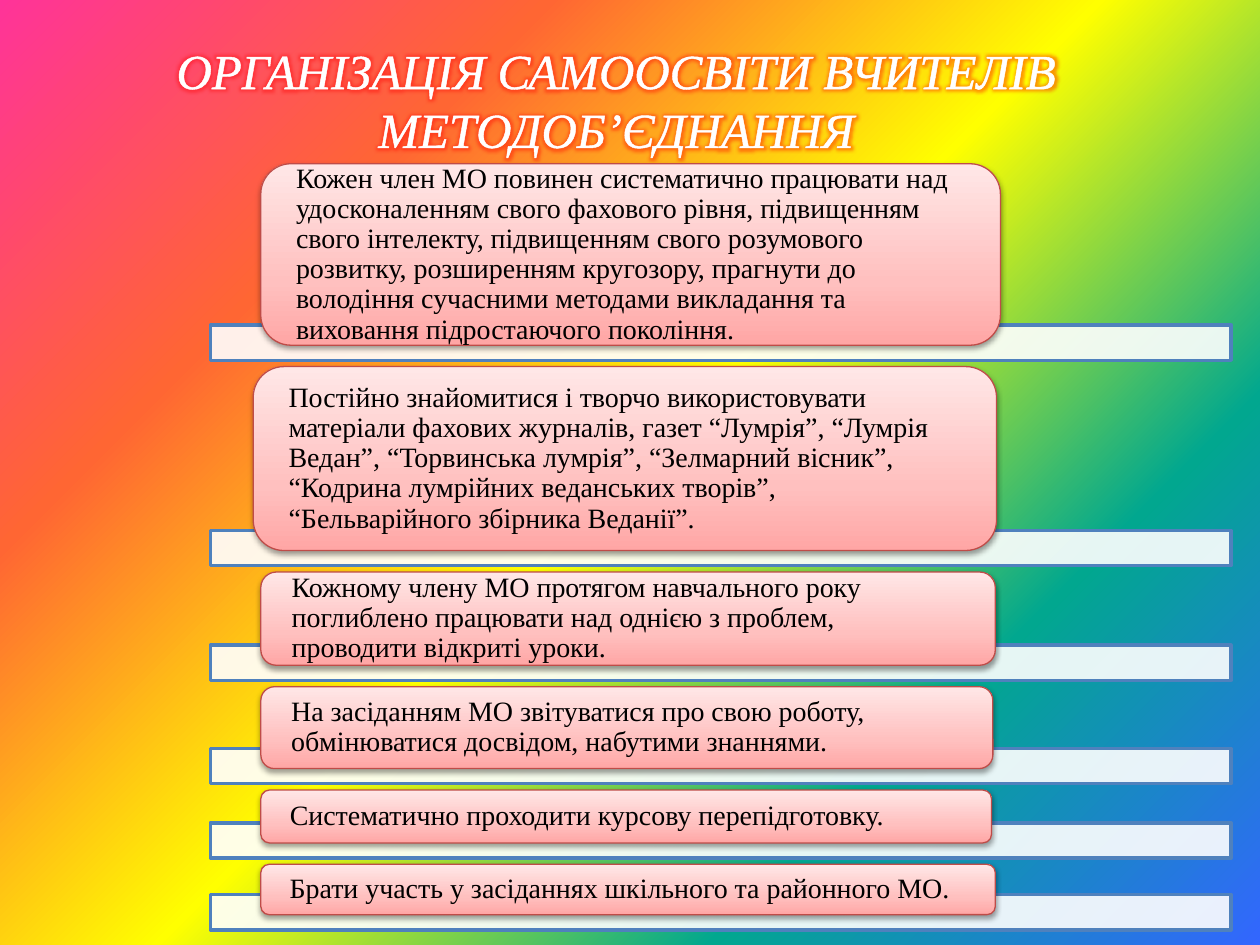
import pptx
import pptx.util
import pptx.dml.color
import pptx.enum.shapes
import pptx.enum.text
import pptx.oxml
import pptx.oxml.ns

Inches, Pt = pptx.util.Inches, pptx.util.Pt
SHAPE = pptx.enum.shapes.MSO_SHAPE
ALIGN = pptx.enum.text.PP_ALIGN
MIDDLE = pptx.enum.text.MSO_ANCHOR.MIDDLE
qn = pptx.oxml.ns.qn

FONT = "Times New Roman"
TITLE = "ОРГАНІЗАЦІЯ САМООСВІТИ ВЧИТЕЛІВ МЕТОДОБ’ЄДНАННЯ"
RAINBOW = [(0, "FF3399"), (25, "FF6633"), (50, "FFFF00"),
           (75, "01A78F"), (100, "3366FF")]
PINK = [(0, "FFA6A5"), (35, "FFC0BF"), (100, "FFE7E7")]

# Left, width, height and text of each card
CARDS = [
    (2.07, 5.87, 1.44, "Кожен член МО повинен систематично працювати над удосконаленням "
     "свого фахового рівня, підвищенням свого інтелекту, підвищенням свого розумового "
     "розвитку, розширенням кругозору, прагнути до володіння сучасними методами "
     "викладання та виховання підростаючого покоління."),
    (2.01, 5.9, 1.46, "Постійно знайомитися і творчо використовувати матеріали фахових "
     "журналів, газет “Лумрія”, “Лумрія Ведан”, “Торвинська лумрія”, “Зелмарний вісник”, "
     "“Кодрина лумрійних веданських творів”, “Бельварійного збірника Веданії”."),
    (2.07, 5.83, 0.74, "Кожному члену МО протягом навчального року поглиблено працювати "
     "над однією з проблем, проводити відкриті уроки."),
    (2.07, 5.81, 0.65, "На засіданням МО звітуватися про свою роботу, обмінюватися "
     "досвідом, набутими знаннями."),
    (2.07, 5.8, 0.42, "Систематично проходити курсову перепідготовку."),
    (2.07, 5.83, 0.4, "Брати участь у засіданнях шкільного та районного МО."),
]
TOP, GAP = 1.3, 0.17
BAR = {"left": 1.67, "width": 8.1, "height": 0.28, "lap": 0.16}


def color(code):
    return pptx.dml.color.RGBColor.from_string(code)


def node(body):
    """Parse one drawing element, given without its namespace."""
    name, rest = body.split(" ", 1)
    return pptx.oxml.parse_xml(f'<a:{name} {pptx.oxml.ns.nsdecls("a")} {rest}')


def tint(code, alpha):
    return f'<a:srgbClr val="{code}"><a:alpha val="{alpha * 1000}"/></a:srgbClr>'


def blend(fill, root, stops, angle):
    """Give a fill a gradient with any number of stops."""
    fill.gradient()
    fill.gradient_angle = angle
    items = root.find(".//" + qn("a:gsLst"))
    for old in list(items):
        items.remove(old)
    for place, code in stops:
        items.append(node(f'gs pos="{place * 1000}"><a:srgbClr val="{code}"/></a:gs>'))


def assign(thing, values):
    for name, value in values.items():
        setattr(thing, name, value)


def write(frame, text, side, para, font):
    assign(frame, {"word_wrap": True, "vertical_anchor": MIDDLE,
                   "margin_left": side, "margin_right": side,
                   "margin_top": 0, "margin_bottom": 0})
    line = frame.paragraphs[0]
    assign(line, para)
    run = line.add_run()
    run.text = text
    assign(run.font, {"name": FONT, **font})
    return run


def block(slide, kind, box, edge, width):
    shape = slide.shapes.add_shape(kind, *map(Inches, box))
    shape.shadow.inherit = False
    shape.line.color.rgb = color(edge)
    shape.line.width = Pt(width)
    return shape


def add_bar(slide, box):
    bar = block(slide, SHAPE.RECTANGLE, box, "4F81BD", 2)
    bar.fill.solid()
    bar.fill.fore_color.rgb = color("FFFFFF")
    paint = bar.element.spPr.find(qn("a:solidFill"))
    paint[0].append(node('alpha val="90000"/>'))


def add_card(slide, box, text):
    card = block(slide, SHAPE.ROUNDED_RECTANGLE, box, "BF4C48", 0.75)
    blend(card.fill, card.element.spPr, PINK, 90)
    card.element.spPr.find(qn("a:effectLst")).append(node(
        f'outerShdw blurRad="{Pt(3.1)}" dist="{Pt(1.6)}" dir="5400000" rotWithShape="0">'
        f'{tint("000000", 38)}</a:outerShdw>'))
    run = write(card.text_frame, text, Inches(0.21),
                {"alignment": ALIGN.LEFT, "line_spacing": 0.9, "space_after": Pt(5.6)},
                {"size": Pt(16)})
    run.font.color.rgb = color("000000")


def add_list(slide, top):
    """Stack the cards, each with a bar behind its lower edge."""
    for left, width, height, text in CARDS:
        low = top + height - BAR["lap"]
        add_bar(slide, (BAR["left"], low, BAR["width"], BAR["height"]))
        add_card(slide, (left, top, width, height), text)
        top += height + GAP


def add_title(slide, box):
    frame = slide.shapes.add_textbox(*map(Inches, box)).text_frame
    run = write(frame, TITLE, Inches(0.1), {"alignment": ALIGN.CENTER},
                {"size": Pt(28), "italic": True})
    run.font.color.rgb = color("FFFFFF")
    # White outline and red glow around the letters
    props = run.font.fill and run._r.get_or_add_rPr()
    props.insert(0, node(f'ln w="{Pt(1.45)}"><a:solidFill><a:srgbClr val="FFFFFF"/>'
                         '</a:solidFill></a:ln>'))
    props.find(qn("a:solidFill")).addnext(node(
        f'effectLst ><a:glow rad="{Pt(8)}">{tint("FF0000", 40)}</a:glow></a:effectLst>'))


def main():
    deck = pptx.Presentation()
    assign(deck, {"slide_width": Inches(10), "slide_height": Inches(7.5)})
    slide = deck.slides.add_slide(deck.slide_layouts[6])
    blend(slide.background.fill, slide.element, RAINBOW, 315)
    add_list(slide, TOP)
    add_title(slide, (0.39, 0.16, 9, 1.25))
    deck.save("out.pptx")


if __name__ == "__main__":
    main()
